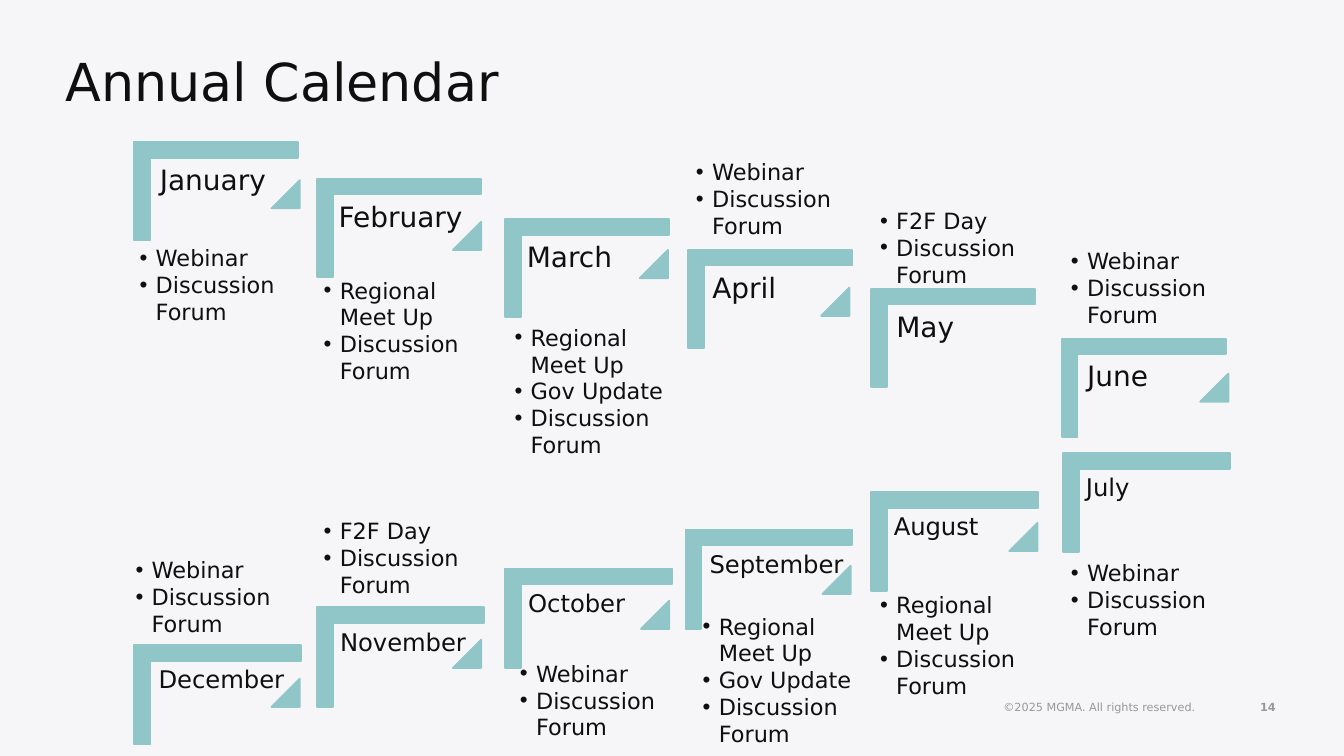
from dataclasses import dataclass
from typing import NamedTuple, Optional

from lxml.etree import SubElement
from pptx import Presentation
from pptx.dml.color import RGBColor
from pptx.enum.shapes import MSO_SHAPE as Preset
from pptx.enum.text import MSO_ANCHOR as Anchor, PP_ALIGN as Align
from pptx.oxml.ns import qn
from pptx.util import Pt

PX = 9144  # one px is a hundredth of an inch
WIDTH, HEIGHT = 1000, 562.5
LINE_LETTERS = 10  # a longer event wraps to a second line


@dataclass(frozen=True)
class Theme:
    font: str = "DejaVu Sans"
    background: RGBColor = RGBColor(0xF6, 0xF6, 0xF8)
    ink: RGBColor = RGBColor(0x0F, 0x0F, 0x0F)
    muted: RGBColor = RGBColor(0x98, 0x98, 0x9C)
    accent: RGBColor = RGBColor(0x91, 0xC6, 0xC9)
    title_size: int = 28
    first_half_size: int = 15
    second_half_size: int = 13
    list_size: int = 12
    footer_size: int = 6


class Box(NamedTuple):
    left: int
    top: int
    width: int
    height: int

    def emu(self):
        return [round(length * PX) for length in self]


class Month(NamedTuple):
    name: str
    left: int
    top: int
    label_left: int
    triangle: Optional[tuple]  # offset from the step's corner
    list_at: tuple
    events: list


class Row(NamedTuple):
    step_width: int
    step_height: int
    label_width: int
    label_height: int
    inset: int
    label_size: int
    months: list


THEME = Theme()
FORUM = "Discussion Forum"
WEBINAR = ["Webinar", FORUM]
FACE_TO_FACE = ["F2F Day", FORUM]
MEET_UP = ["Regional Meet Up", FORUM]
UPDATE = ["Regional Meet Up", "Gov Update", FORUM]

FIRST_HALF = Row(122, 73, 110, 97, 6, THEME.first_half_size, [
    Month("January", 100, 106, 13, (102, 28), (94, 177), WEBINAR),
    Month("February", 236, 133, 10, (101, 32), (231, 201), MEET_UP),
    Month("March", 376, 163, 10, (100, 23), (373, 236), UPDATE),
    Month("April", 512, 186, 12, (99, 28), (508, 113), WEBINAR),
    Month("May", 648, 215, 13, None, (645, 149), FACE_TO_FACE),
    Month("June", 790, 252, 13, (103, 26), (787, 179), WEBINAR),
])
SECOND_HALF = Row(124, 74, 112, 98, 5, THEME.second_half_size, [
    Month("July", 791, 337, 12, None, (787, 411), WEBINAR),
    Month("August", 648, 366, 12, (103, 23), (645, 435), MEET_UP),
    Month("September", 510, 394, 13, (102, 27), (513, 451), UPDATE),
    Month("October", 376, 423, 12, (101, 24), (377, 486), WEBINAR),
    Month("November", 236, 452, 12, (101, 24), (231, 380), FACE_TO_FACE),
    Month("December", 100, 480, 13, (102, 25), (91, 409), WEBINAR),
])


def style(paragraph, size, color=THEME.ink, bold=False):
    for run in paragraph.runs:
        run.font.name = THEME.font
        run.font.size = Pt(size)
        run.font.color.rgb = color
        run.font.bold = bold


def add_text(shapes, box, text, size, **font):
    """Add a wrapped text box and return its frame."""
    frame = shapes.add_textbox(*box.emu()).text_frame
    frame.word_wrap = True
    frame.text = text
    for paragraph in frame.paragraphs:
        style(paragraph, size, **font)
    return frame


def add_accent(shapes, preset, box, *adjustments):
    shape = shapes.add_shape(preset, *box.emu())
    shape.shadow.inherit = False
    shape.fill.solid()
    shape.fill.fore_color.rgb = THEME.accent
    shape.line.color.rgb = THEME.accent
    shape.line.width = Pt(1)
    for index, value in enumerate(adjustments):
        shape.adjustments[index] = value
    return shape


def add_step(shapes, row, month):
    """Draw a bracket with its month name and corner triangle."""
    width, height = row.step_width, row.step_height
    # The corner is laid upright around the same centre, then turned.
    shift = (width - height) / 2
    upright = Box(month.left + shift, month.top - shift, height, width)
    add_accent(shapes, Preset.CORNER, upright, 0.16, 0.16).rotation = 90

    label = Box(month.left + month.label_left, month.top + 12,
                row.label_width, row.label_height)
    frame = add_text(shapes, label, month.name, row.label_size)
    frame.margin_left = frame.margin_right = row.inset * PX
    frame.margin_top = frame.margin_bottom = row.inset * PX
    frame.paragraphs[0].line_spacing = 0.9

    if month.triangle:
        across, down = month.triangle
        corner = Box(month.left + across, month.top + down, 21, 21)
        add_accent(shapes, Preset.ISOSCELES_TRIANGLE, corner, 1)


def add_events(slide, position, events):
    lines = sum(2 if len(event) > LINE_LETTERS else 1 for event in events)
    box = Box(*position, 131, 20 * lines + 11)
    frame = add_text(slide.shapes, box, "\n".join(events), THEME.list_size)
    for paragraph in frame.paragraphs:
        properties = paragraph._p.get_or_add_pPr()
        properties.set("marL", str(12 * PX))
        properties.set("indent", str(-12 * PX))
        SubElement(properties, qn("a:buFont"), typeface="Arial")
        SubElement(properties, qn("a:buChar"), char="•")


def add_row(slide, row):
    group = slide.shapes.add_group_shape()
    for month in row.months:
        add_step(group.shapes, row, month)
        add_events(slide, month.list_at, month.events)


def add_title(slide, box, text):
    title = slide.shapes.title
    title.left, title.top, title.width, title.height = box.emu()
    frame = title.text_frame
    frame.text = text
    frame.vertical_anchor = Anchor.TOP
    paragraph = frame.paragraphs[0]
    paragraph.alignment = Align.LEFT
    paragraph.line_spacing = 0.9
    style(paragraph, THEME.title_size)


def add_footer(slide, box):
    number_width = 60
    notice = Box(box.left, box.top, box.width - number_width, box.height)
    number = Box(box.left + notice.width, box.top, number_width, box.height)
    for part, text, bold in ((notice, "©2025 MGMA. All rights reserved.", False),
                             (number, "14", True)):
        frame = add_text(slide.shapes, part, text, THEME.footer_size,
                         color=THEME.muted, bold=bold)
        frame.vertical_anchor = Anchor.MIDDLE
        frame.paragraphs[0].alignment = Align.RIGHT


def main():
    presentation = Presentation()
    presentation.slide_width = round(WIDTH * PX)
    presentation.slide_height = round(HEIGHT * PX)
    slide = presentation.slides.add_slide(presentation.slide_layouts[5])
    slide.background.fill.solid()
    slide.background.fill.fore_color.rgb = THEME.background
    add_title(slide, Box(39, 37, 675, 57), "Annual Calendar")
    add_footer(slide, Box(641, 511, 318, 30))
    add_row(slide, FIRST_HALF)
    add_row(slide, SECOND_HALF)
    presentation.save("out.pptx")


if __name__ == "__main__":
    main()
